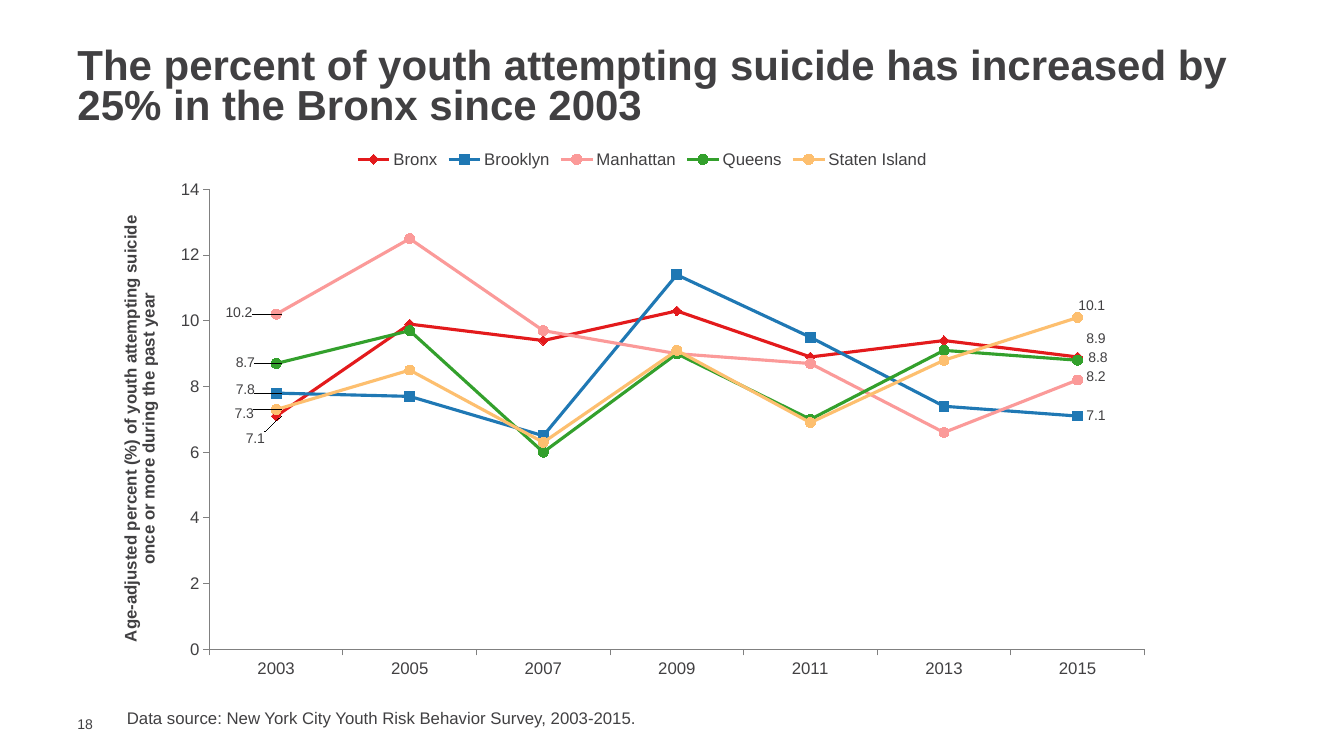
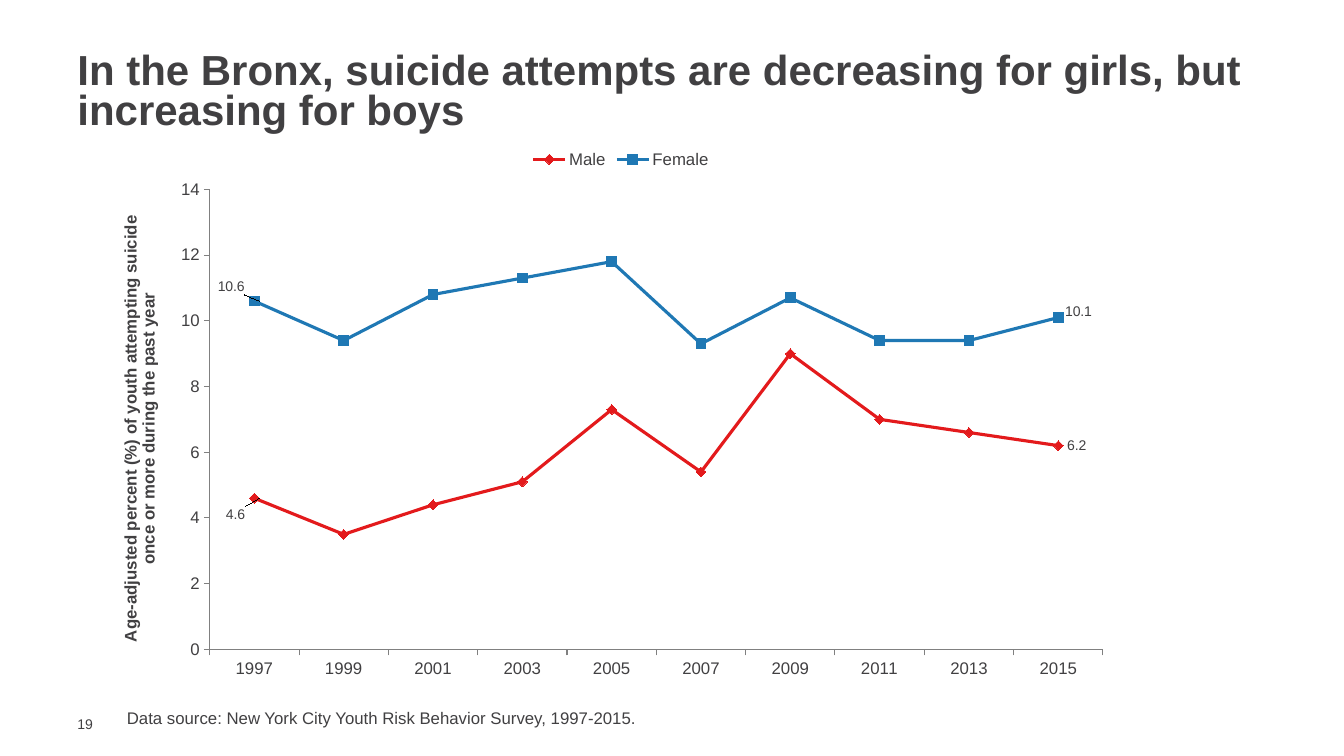
"""Builds two slides of line charts on youth suicide attempts."""
from lxml import etree
from pptx import Presentation
from pptx.chart.data import CategoryChartData
from pptx.dml.color import RGBColor
from pptx.enum.chart import (XL_CHART_TYPE, XL_LABEL_POSITION, XL_LEGEND_POSITION,
                             XL_MARKER_STYLE, XL_TICK_MARK)
from pptx.enum.text import MSO_ANCHOR
from pptx.oxml import parse_xml
from pptx.oxml.ns import nsdecls, qn
from pptx.util import Inches, Pt

FONT = "Arial"
TEXT = "414042"
AXIS = "808080"
RED, BLUE, PINK, GREEN, ORANGE = "E31A1C", "1F78B4", "FB9A99", "33A02C", "FDBF6F"
DIAMOND, SQUARE, CIRCLE = XL_MARKER_STYLE.DIAMOND, XL_MARKER_STYLE.SQUARE, XL_MARKER_STYLE.CIRCLE
AXIS_TITLE = "Age-adjusted percent (%) of youth attempting suicide once or more during the past year"
CHART_HEIGHT = 5.37

BOROUGHS = [
    ("Bronx", RED, DIAMOND, [7.1, 9.9, 9.4, 10.3, 8.9, 9.4, 8.9], (-0.39, 0.23), (0, -0.18)),
    ("Brooklyn", BLUE, SQUARE, [7.8, 7.7, 6.5, 11.4, 9.5, 7.4, 7.1], (-0.49, -0.03), (0, 0)),
    ("Manhattan", PINK, CIRCLE, [10.2, 12.5, 9.7, 9, 8.7, 6.6, 8.2], (-0.59, -0.01), (0, -0.03)),
    ("Queens", GREEN, CIRCLE, [8.7, 9.7, 6, 9, 7, 9.1, 8.8], (-0.49, -0.01), (0.02, -0.02)),
    ("Staten Island", ORANGE, CIRCLE, [7.3, 8.5, 6.3, 9.1, 6.9, 8.8, 10.1], (-0.5, 0.04), (-0.08, -0.12)),
]
SEXES = [
    ("Male", RED, DIAMOND, [4.6, 3.5, 4.4, 5.1, 7.3, 5.4, 9, 7, 6.6, 6.2], (-0.37, 0.16), (0, 0)),
    ("Female", BLUE, SQUARE, [10.6, 9.4, 10.8, 11.3, 11.8, 9.3, 10.7, 9.4, 9.4, 10.1], (-0.45, -0.14), (-0.02, -0.06)),
]


def rgb(value):
    return RGBColor.from_string(value)


def set_font(font, size, bold=False):
    font.name = FONT
    font.size = Pt(size)
    font.bold = bold
    font.color.rgb = rgb(TEXT)


def add_text(slide, text, box, size, bold=False, anchor=MSO_ANCHOR.TOP, spacing=None):
    tf = slide.shapes.add_textbox(*map(Inches, box)).text_frame
    tf.word_wrap = True
    tf.vertical_anchor = anchor
    p = tf.paragraphs[0]
    p.text = text
    p.line_spacing = spacing
    set_font(p.font, size, bold)
    return tf


def manual_layout(**values):
    layout = parse_xml(f"<c:layout {nsdecls('c')}><c:manualLayout/></c:layout>")
    for name, value in values.items():
        etree.SubElement(layout[0], qn(f"c:{name}")).set("val", str(value))
    return layout


def set_plot_area(chart, x, width):
    area = chart._chartSpace.chart.plotArea
    for old in area.findall(qn("c:layout")):
        area.remove(old)
    area.insert(0, manual_layout(layoutTarget="inner", xMode="edge", yMode="edge",
                                 x=x, y=0.093, w=width, h=0.85))


def style_axis(axis):
    axis.has_major_gridlines = False
    axis.major_tick_mark = XL_TICK_MARK.OUTSIDE
    axis.minor_tick_mark = XL_TICK_MARK.NONE
    axis.format.line.color.rgb = rgb(AXIS)
    axis.format.line.width = Pt(0.75)
    set_font(axis.tick_labels.font, 12)


def label_ends(series, last, offsets, chart_width):
    labels = series.data_labels
    labels.show_value = False
    set_font(labels.font, 10)
    for index, (dx, dy) in zip((0, last), offsets):
        label = series.points[index].data_label
        set_font(label.font, 10)
        label.position = XL_LABEL_POSITION.RIGHT
        if dx or dy:
            element = labels._element.findall(qn("c:dLbl"))[-1]
            element.insert(1, manual_layout(x=round(dx / chart_width, 4),
                                            y=round(dy / CHART_HEIGHT, 4)))
    labels._element.append(parse_xml(
        f"<c:extLst {nsdecls('c')}><c:ext uri='{{CE6537A1-D6FC-4f65-9D91-7224C49458BB}}' "
        "xmlns:c15='http://schemas.microsoft.com/office/drawing/2012/chart'>"
        "<c15:showLeaderLines val='1'/></c:ext></c:extLst>"))


def style_series(series, color, marker):
    series.smooth = False
    series.format.line.color.rgb = rgb(color)
    series.format.line.width = Pt(2.25)
    series.marker.style = marker
    series.marker.size = 7
    series.marker.format.fill.solid()
    series.marker.format.fill.fore_color.rgb = rgb(color)
    series.marker.format.line.color.rgb = rgb(color)


def add_line_chart(slide, years, rows, width, plot_x, plot_width):
    data = CategoryChartData()
    data.categories = [str(year) for year in years]
    for name, _, _, values, _, _ in rows:
        data.add_series(name, values)
    chart = slide.shapes.add_chart(XL_CHART_TYPE.LINE_MARKERS, Inches(1.16), Inches(1.38),
                                   Inches(width), Inches(CHART_HEIGHT), data).chart
    set_font(chart.font, 10)
    chart.has_title = False
    chart.has_legend = True
    chart.legend.position = XL_LEGEND_POSITION.TOP
    chart.legend.include_in_layout = False
    set_font(chart.legend.font, 12)
    set_plot_area(chart, plot_x, plot_width)
    style_axis(chart.category_axis)
    axis = chart.value_axis
    style_axis(axis)
    axis.minimum_scale, axis.maximum_scale, axis.major_unit = 0, 14, 2
    p = axis.axis_title.text_frame.paragraphs[0]
    p.text = AXIS_TITLE
    set_font(p.font, 12, bold=True)
    plot = chart.plots[0]
    plot.vary_by_categories = False
    for series, (_, color, marker, _, first, last) in zip(plot.series, rows):
        style_series(series, color, marker)
        label_ends(series, len(years) - 1, (first, last), width)


def add_chart_slide(prs, number, title, title_top, years, rows, *chart_size):
    slide = prs.slides.add_slide(prs.slide_layouts[6])
    tf = add_text(slide, str(number), (0.67, 7.1, 0.43, 0.17), 10, anchor=MSO_ANCHOR.MIDDLE)
    tf.margin_right = tf.margin_top = tf.margin_bottom = 0
    add_text(slide, title, (0.67, title_top, 12, 0.91), 30, True, MSO_ANCHOR.MIDDLE, 0.8)
    add_line_chart(slide, years, rows, *chart_size)
    add_text(slide, f"Data source: New York City Youth Risk Behavior Survey, {years[0]}-{years[-1]}.",
             (1.16, 6.97, 9.71, 0.3), 12)


def main():
    prs = Presentation()
    prs.slide_width, prs.slide_height = Inches(13.33), Inches(7.5)
    add_chart_slide(prs, 18, "The percent of youth attempting suicide has increased by 25% in the Bronx since 2003",
                    0.42, range(2003, 2016, 2), BOROUGHS, 10.42, 0.088, 0.89)
    add_chart_slide(prs, 19, "In the Bronx, suicide attempts are decreasing for girls, but increasing for boys",
                    0.47, range(1997, 2016, 2), SEXES, 10, 0.092, 0.886)
    prs.save("out.pptx")


if __name__ == "__main__":
    main()
